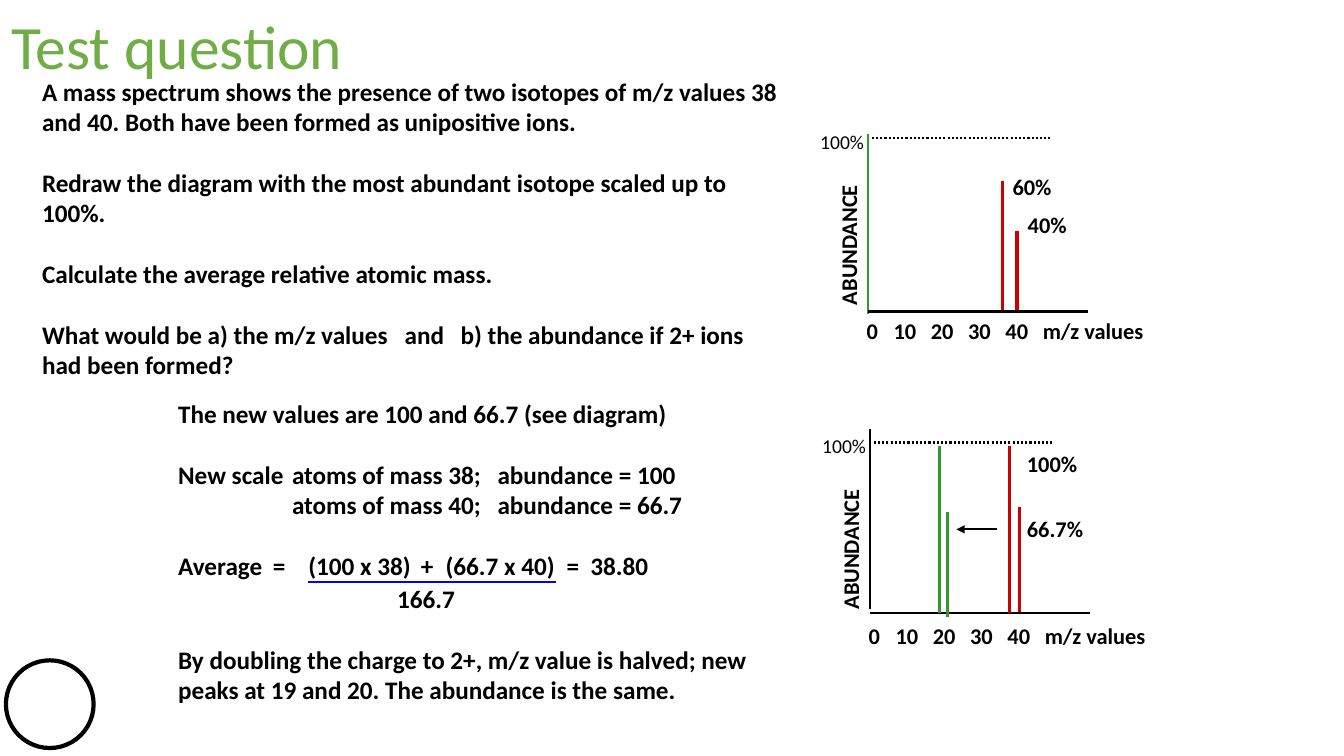
"""Build the test question slide on isotopes and their mass spectra."""
from dataclasses import dataclass
from lxml import etree
from pptx import Presentation
from pptx.dml.color import RGBColor
from pptx.enum.dml import MSO_LINE
from pptx.enum.shapes import MSO_CONNECTOR, MSO_SHAPE
from pptx.enum.text import MSO_ANCHOR, MSO_AUTO_SIZE, PP_ALIGN
from pptx.oxml.ns import qn
from pptx.util import Cm, Pt

STRAIGHT = MSO_CONNECTOR.STRAIGHT
OVAL = MSO_SHAPE.OVAL
DOTS = MSO_LINE.ROUND_DOT
TOP = MSO_ANCHOR.TOP
FIXED = MSO_AUTO_SIZE.NONE
LEFT = PP_ALIGN.LEFT


@dataclass(frozen=True)
class Theme:
    font: str = "Calibri"
    black: str = "000000"
    white: str = "FFFFFF"
    lime: str = "70AD47"
    green: str = "339933"
    red: str = "CC0000"
    blue: str = "0000FF"
    title: int = 44
    body: int = 18
    label: int = 16
    small: int = 14
    thin: float = 1.5
    thick: float = 2.25
    ring: int = 3


theme = Theme()
deck = Presentation()
deck.slide_width, deck.slide_height = Cm(33.87), Cm(19.05)
slide = deck.slides.add_slide(deck.slide_layouts[5])
shapes = slide.shapes


def text(words, at=None, frame=None, size=theme.label, bold=True,
         color=theme.black, before=0, after=0, indent=0, tabs=(), turn=0):
    """Write one paragraph in a new box or in a given frame."""
    if frame is None:
        box = shapes.add_textbox(*map(Cm, at))
        box.rotation = turn
        frame = box.text_frame
    frame.word_wrap = True
    frame.auto_size = FIXED
    frame.vertical_anchor = TOP
    para = frame.paragraphs[0]
    if para.text:
        para = frame.add_paragraph()
    props = para._p.get_or_add_pPr()
    if indent:
        props.set("marL", str(Cm(indent)))
    if tabs:
        stops = etree.SubElement(props, qn("a:tabLst"))
        for stop in tabs:
            etree.SubElement(stops, qn("a:tab"), pos=str(Cm(stop)), algn="l")
    para.alignment = LEFT
    para.space_before, para.space_after = Pt(before), Pt(after)
    run = para.add_run()
    run.text = words
    font = run.font
    font.name, font.size, font.bold = theme.font, Pt(size), bold
    font.color.rgb = RGBColor.from_string(color)
    return frame


def line(x1, y1, x2, y2, color=theme.black, width=theme.thin, dash=None, head=False):
    """Draw a straight line, with an arrowhead at its end if asked."""
    link = shapes.add_connector(STRAIGHT, Cm(x1), Cm(y1), Cm(x2), Cm(y2))
    link.line.color.rgb = RGBColor.from_string(color)
    link.line.width = Pt(width)
    if dash:
        link.line.dash_style = dash
    if head:
        etree.SubElement(link.line._get_or_add_ln(), qn("a:tailEnd"), type="triangle")
    etree.SubElement(link._element.spPr, qn("a:effectLst"))


ring = shapes.add_shape(OVAL, Cm(0.15), Cm(16.64), Cm(2.21), Cm(2.21))
ring.shadow.inherit = False
ring.fill.solid()
ring.fill.fore_color.rgb = RGBColor.from_string(theme.white)
ring.line.color.rgb = RGBColor.from_string(theme.black)
ring.line.width = Pt(theme.ring)

title = shapes.title
title.left, title.top, title.width, title.height = map(Cm, (0.03, 0.08, 25.4, 2.13))
text("Test question", frame=title.text_frame, size=theme.title, bold=False,
     color=theme.lime)

blank = 21.8
tasks = (
    "A mass spectrum shows the presence of two isotopes of m/z values 38 and 40. "
    "Both have been formed as unipositive ions.",
    "Redraw the diagram with the most abundant isotope scaled up to 100%.",
    "Calculate the average relative atomic mass.",
    "What would be a) the m/z values\tand\tb) the abundance if 2+ ions had been formed?",
)
frame = None
for task in tasks:
    frame = text(task, at=(0.81, 1.8, 19.25, 7.95), frame=frame, size=theme.body,
                 before=blank if frame else 0, tabs=(9.14, 10.55))

scale = (2.87, 8.05)
terms = (2.39, 3.28, 6.12, 6.74, 9.79, 10.39)
steps = (
    ("The new values are 100 and 66.7 (see diagram)", {}),
    ("New scale\tatoms of mass 38;\tabundance = 100", dict(before=blank, tabs=scale)),
    ("\tatoms of mass 40;\tabundance = 66.7", dict(tabs=scale)),
    ("Average\t=\t(100 x 38)\t+\t(66.7 x 40)\t=\t38.80",
     dict(before=blank, after=2.5, tabs=terms)),
    ("166.7", dict(indent=5.52)),
    ("By doubling the charge to 2+, m/z value is halved; new peaks at 19 and 20. "
     "The abundance is the same.", dict(before=blank)),
)
frame = None
for words, style in steps:
    frame = text(words, at=(4.24, 9.91, 15.98, 8.08), frame=frame, size=theme.body,
                 **style)
line(7.77, 14.66, 14.02, 14.66, theme.blue)

ticks = [0.68 + 0.94 * i for i in range(5)]
plots = (
    (0, 0, 3.38, 7.92, 7.85, theme.green),
    (0.05, 7.67, 10.8, 15.34, 15.44, theme.black),
)
for dx, dy, top, foot, base, color in plots:
    line(21.87 + dx, top, 21.87 + dx, foot, color)
    line(21.87 + dx, base, 27.43 + dx, base)
    line(21.97 + dx, 3.48 + dy, 26.47 + dx, 3.48 + dy, dash=DOTS)
    text("0\t10\t20\t30\t40\tm/z values", at=(21.59 + dx, 7.87 + dy, 7.75, 0.94),
         tabs=ticks)
    text("ABUNDANCE", at=(19.3 + dx, 5.38 + dy, 4.17, 0.94), turn=270)
    text("100%", at=(20.42 + dx, 3.15 + dy, 2.08, 0.86), size=theme.small, bold=False)

peaks = (
    (25.27, 4.55, 7.82, theme.red),
    (25.63, 5.82, 7.82, theme.red),
    (23.67, 11.23, 15.44, theme.green),
    (23.88, 12.9, 15.54, theme.green),
    (25.43, 11.23, 15.44, theme.red),
    (25.7, 12.78, 15.42, theme.red),
)
for x, top, base, color in peaks:
    line(x, top, x, base, color, theme.thick)
line(25.12, 13.34, 24.1, 13.34, head=True)

marks = (
    ((25.27, 4.24, 2.08, 1.96), "60%", "40%", 8, 0.38),
    ((25.63, 11.23, 2.08, 2.64), "100%", "66.7%", 27, 0),
)
for at, high, low, gap, indent in marks:
    frame = text(high, at=at)
    text(low, frame=frame, before=gap, indent=indent)

deck.save("out.pptx")
